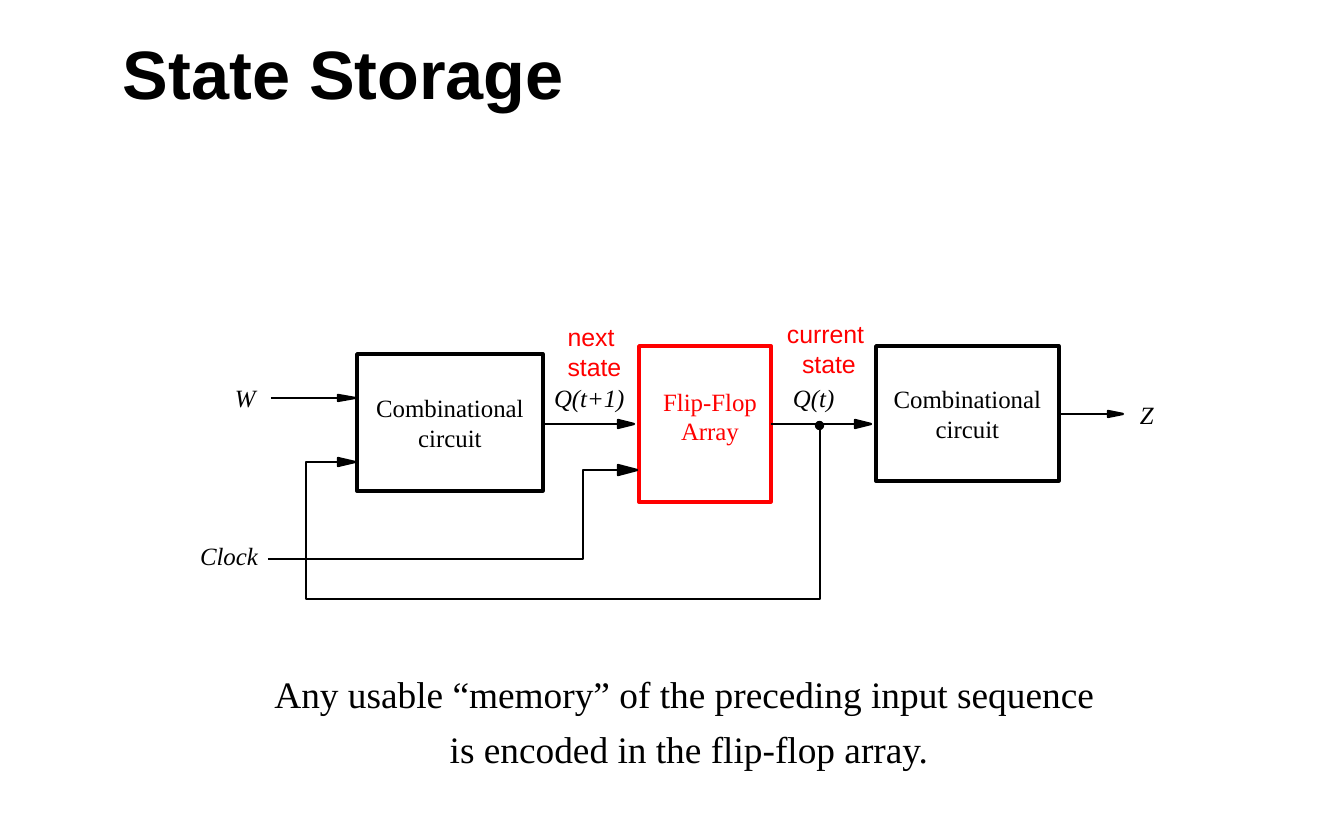
from pptx import Presentation
from pptx.dml.color import RGBColor
from pptx.enum.shapes import MSO_CONNECTOR, MSO_SHAPE
from pptx.enum.text import MSO_ANCHOR, PP_ALIGN
from pptx.oxml.ns import qn
from pptx.util import Pt
from lxml.etree import SubElement

PX = 914400 / 112
BLACK = RGBColor(0, 0, 0)
RED = RGBColor(255, 0, 0)
SERIF, SANS = "Times New Roman", "Arial"


def emu(*lengths):
    return [round(n * PX) for n in lengths]


def write(sp, lines, font, margins=(0, 0, 0, 0), align=PP_ALIGN.CENTER,
          anchor=MSO_ANCHOR.MIDDLE, wrap=True):
    """Put one paragraph per line into sp; margins run left, top, right, bottom."""
    tf = sp.text_frame
    tf.word_wrap = wrap
    tf.vertical_anchor = anchor
    sides = ("left", "top", "right", "bottom")
    for side, margin in zip(sides, emu(*margins)):
        setattr(tf, f"margin_{side}", margin)
    for i, line in enumerate(lines):
        p = tf.paragraphs[0] if i == 0 else tf.add_paragraph()
        p.alignment = align
        r = p.add_run()
        r.text = line
        for name, value in font.items():
            if name == "color":
                r.font.color.rgb = value
            else:
                setattr(r.font, name, value)
    return tf


prs = Presentation()
prs.slide_width, prs.slide_height = emu(1344, 840)
s = prs.slides.add_slide(prs.slide_layouts[6])
shapes = s.shapes

# Title and closing remark
sp = shapes.add_textbox(*emu(112, 2, 1120, 140))
write(sp, ["State Storage"], dict(name=SANS, size=Pt(44), bold=True, color=BLACK),
      (11, 11, 11, 11), PP_ALIGN.LEFT)

sp = shapes.add_textbox(*emu(200, 641, 952, 160))
remark = ["Any usable “memory” of the preceding input sequence ",
          "is encoded in the flip-flop array."]
tf = write(sp, remark, dict(name=SERIF, size=Pt(24), color=BLACK), (11, 11, 11, 11))
for p in tf.paragraphs:
    p.space_before = Pt(6.4)
    left, indent = emu(43, -17)
    pPr = p._p.get_or_add_pPr()
    pPr.set("marL", str(left))
    pPr.set("indent", str(indent))

# Circuit blocks
blocks = [
    ((357, 354, 186, 137), ["Combinational", "circuit"], BLACK, (0, 0, 0, 0)),
    ((639, 346, 132, 156), ["Flip-Flop", "Array"], RED, (10, 0, 0, 16)),
    ((876, 346, 183, 135), ["Combinational", "circuit"], BLACK, (0, 0, 0, 0)),
]
for box, lines, color, margins in blocks:
    sp = shapes.add_shape(MSO_SHAPE.RECTANGLE, *emu(*box))
    sp.shadow.inherit = False
    sp.fill.background()
    sp.line.color.rgb = color
    sp.line.width = Pt(2.25)
    write(sp, lines, dict(name=SERIF, size=Pt(16), color=color), margins)

# Straight wires
for x1, x2, y in [(271, 338, 398), (543, 618, 424), (771, 855, 424), (1059, 1108, 414)]:
    line = shapes.add_connector(MSO_CONNECTOR.STRAIGHT, *emu(x1, y, x2, y))
    line.line.color.rgb = BLACK
    line.line.width = Pt(1.5)
    SubElement(line._element.spPr, qn("a:effectLst"))

# Bent wires (clock, feedback) and arrowheads
clock = [(268, 559), (583, 559), (583, 470), (618, 470)]
feedback = [(338, 462), (306, 462), (306, 599), (820, 599), (820, 424)]
outlines = [(clock, False), (feedback, False)]
# tail x, tip x, y, half height
heads = [(338, 355, 398, 3), (338, 355, 462, 4), (618, 634, 424, 4),
         (618, 637, 470, 5), (855, 871, 424, 4), (1108, 1123, 414, 3)]
for tail, tip, y, half in heads:
    outlines.append(([(tail, y + half), (tip, y), (tail, y - half)], True))
for points, closed in outlines:
    builder = shapes.build_freeform(*points[0], scale=PX)
    builder.add_line_segments(points[1:], close=closed)
    sp = builder.convert_to_shape()
    sp.shadow.inherit = False
    if closed:
        sp.fill.solid()
        sp.fill.fore_color.rgb = BLACK
    else:
        sp.fill.background()
    sp.line.color.rgb = BLACK
    sp.line.width = Pt(1.5)

# Junction of the current state and the feedback wire
sp = shapes.add_shape(MSO_SHAPE.OVAL, *emu(816, 422, 7, 7))
sp.shadow.inherit = False
sp.fill.solid()
sp.fill.fore_color.rgb = BLACK
sp.line.color.rgb = BLACK
sp.line.width = Pt(1.5)

# Signal names
signals = [("W", 235, 383, 30), ("Clock", 200, 541, 66), ("Q(t+1)", 554, 383, 75),
           ("Q(t)", 793, 383, 48), ("Z", 1140, 400, 21)]
for text, x, y, width in signals:
    sp = shapes.add_textbox(*emu(x, y, width, 30))
    write(sp, [text], dict(name=SERIF, size=Pt(16), italic=True, color=BLACK),
          align=PP_ALIGN.LEFT, anchor=MSO_ANCHOR.TOP)

# State captions
for text, x, y, width in [("next", 549, 316, 84), ("current", 775, 313, 101)]:
    sp = shapes.add_textbox(*emu(x, y, width, 72))
    write(sp, [text, " state"], dict(name=SANS, size=Pt(16), color=RED),
          (11, 6, 11, 6), anchor=MSO_ANCHOR.TOP, wrap=False)

prs.save("out.pptx")
